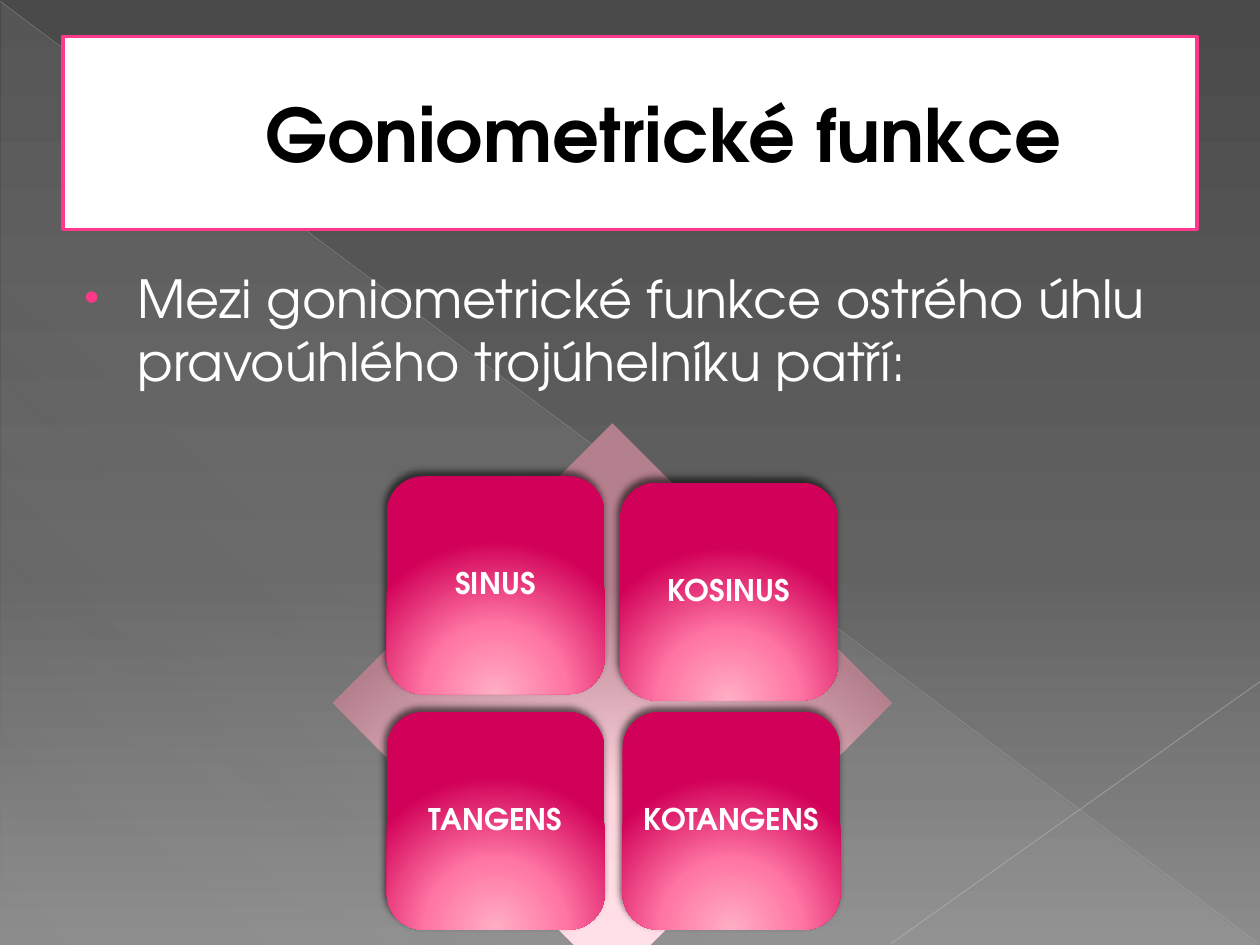
from pptx import Presentation
from pptx.dml import color
from pptx.enum import shapes, text
from pptx.oxml import ns, parse_xml
from pptx.util import Inches, Pt

FONT = "TeX Gyre Adventor"
PINK = "FF388C"
FOCUS = '<a:path path="circle"><a:fillToRect l="50000" t="155000" r="50000" b="-55000"/></a:path>'


def rgb(code):
    return color.RGBColor.from_string(code)


def node(tag, body="", attrs=""):
    return parse_xml(f'<a:{tag} {ns.nsdecls("a")} {attrs}>{body}</a:{tag}>')


def tint(code, alpha=100):
    return f'<a:srgbClr val="{code}"><a:alpha val="{alpha * 1000}"/></a:srgbClr>'


def solid(code, alpha=100):
    return f"<a:solidFill>{tint(code, alpha)}</a:solidFill>"


def blend(fill, root, stops, shade):
    fill.gradient()
    old = root.find(".//" + ns.qn("a:gradFill"))
    marks = "".join(f'<a:gs pos="{pos * 1000}">{tint(*rest)}</a:gs>' for pos, *rest in stops)
    old.getparent().replace(old, node("gradFill", f"<a:gsLst>{marks}</a:gsLst>{shade}"))


def linear(angle):
    return f'<a:lin ang="{angle * 60000}" scaled="0"/>'


def place(item, box):
    for name, size in zip(("left", "top", "width", "height"), box):
        setattr(item, name, Inches(size))


def style(run, **values):
    run.font.color.rgb = rgb(values.pop("ink"))
    for name, value in {"name": FONT, **values}.items():
        setattr(run.font, name, value)


def form(slide, kind, box, stops, shade):
    shape = slide.shapes.add_shape(kind, *map(Inches, box))
    shape.shadow.inherit = False
    shape.line.fill.background()
    blend(shape.fill, shape._element.spPr, stops, shade)
    return shape


def ray(slide, ends, width, code, alpha):
    line = slide.shapes.add_connector(shapes.MSO_CONNECTOR.STRAIGHT, *map(Inches, ends))
    line.line.width = Pt(width)
    line.line.color.rgb = rgb(code)
    props = line._element.spPr
    old = props.find(".//" + ns.qn("a:solidFill"))
    old.getparent().replace(old, parse_xml(solid(code, alpha).replace(
        "<a:solidFill>", f'<a:solidFill {ns.nsdecls("a")}>')))
    props.append(node("effectLst"))


def tile(slide, label, left, top):
    stops = [(0, "FFAFC5"), (46, "FF75A3"), (100, "D10058")]
    shape = form(slide, shapes.MSO_SHAPE.ROUNDED_RECTANGLE,
                 (left, top, 1.73, 1.73), stops, FOCUS)
    glow = shape._element.spPr.find(ns.qn("a:effectLst"))
    glow.append(node("outerShdw", tint("000000", 60),
                     f'blurRad="{Pt(4)}" dist="{Pt(3)}" dir="{245 * 60000}" rotWithShape="0"'))
    frame = shape.text_frame
    for side in ("left", "top", "right", "bottom"):
        setattr(frame, "margin_" + side, 0)
    frame.vertical_anchor = text.MSO_ANCHOR.MIDDLE
    para = frame.paragraphs[0]
    para.alignment = text.PP_ALIGN.CENTER
    para.line_spacing = 0.9
    run = para.add_run()
    run.text = label
    style(run, ink="FFFFFF", size=Pt(17), bold=True)


def write(holder, box, words, indent, **look):
    place(holder, box)
    holder._element.getparent().append(holder._element)
    frame = holder.text_frame
    frame.word_wrap = True
    frame.auto_size = text.MSO_AUTO_SIZE.NONE
    para = frame.paragraphs[0]
    run = para.add_run()
    run.text = words
    style(run, **look)
    props = para._p.get_or_add_pPr()
    for name, size in zip(("marL", "indent"), indent):
        props.set(name, str(Inches(size)))
    return para


def title(slide):
    holder = slide.shapes.title
    para = write(holder, (0.5, 0.29, 9, 1.53), "Goniometrické funkce", (0.53, 0),
                 ink="000000", size=Pt(42), bold=True)
    para.alignment = text.PP_ALIGN.CENTER
    holder.text_frame.vertical_anchor = text.MSO_ANCHOR.MIDDLE
    holder.fill.solid()
    holder.fill.fore_color.rgb = rgb("FFFFFF")
    holder.line.color.rgb = rgb(PINK)
    holder.line.width = Pt(2)
    props = para.runs[0]._r.get_or_add_rPr()
    props.insert(0, node("ln", solid("B12761"), f'w="{Pt(0.5)}"'))


def body(slide):
    para = write(slide.placeholders[1], (0.5, 2.06, 9, 5),
                 "Mezi goniometrické funkce ostrého úhlu pravoúhlého trojúhelníku patří:",
                 (0.49, -0.42), ink="FFFFFF", size=Pt(30))
    props = para._p.get_or_add_pPr()
    for part in (node("buClr", tint(PINK)), node("buSzPct", attrs='val="80000"'),
                 node("buFont", attrs='typeface="Arial"'), node("buChar", attrs='char="•"')):
        props.append(part)


def main():
    deck = Presentation()
    deck.slide_width, deck.slide_height = Inches(10), Inches(7.5)
    slide = deck.slides.add_slide(deck.slide_layouts[1])
    blend(slide.background.fill, slide._element,
          [(0, "4A4A4A"), (60, "626262"), (100, "8C8C8C")], linear(90))
    form(slide, shapes.MSO_SHAPE.RIGHT_TRIANGLE, (0.01, 0.02, 9.98, 7.48),
         [(0, "D2D2D2", 10), (70, "D2D2D2", 8), (100, "D2D2D2", 1)], linear(133))
    ray(slide, (0, 0.01, 9.99, 7.49), 0.39, "BFBFBF", 35)
    ray(slide, (10, 5.41, 7.07, 7.49), 0.47, "C6C6C6", 45)
    title(slide)
    body(slide)
    form(slide, shapes.MSO_SHAPE.DIAMOND, (2.64, 3.36, 4.44, 4.44),
         [(0, "FFE3EA"), (46, "FFD6E0"), (100, "B5808E")], FOCUS)
    for label, left, top in (("SINUS", 3.07, 3.78), ("KOSINUS", 4.92, 3.83),
                             ("TANGENS", 3.07, 5.65), ("KOTANGENS", 4.94, 5.65)):
        tile(slide, label, left, top)
    deck.save("out.pptx")


if __name__ == "__main__":
    main()
